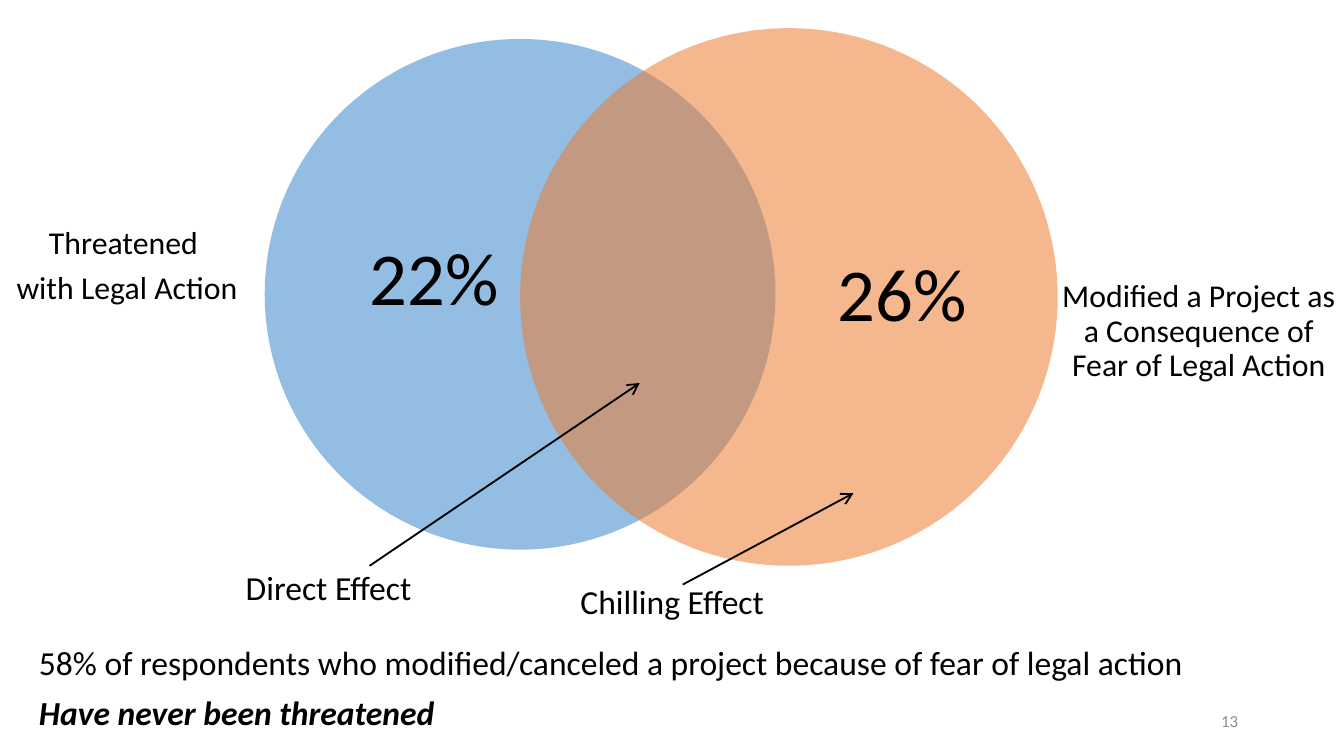
from lxml import etree
from pptx import Presentation
from pptx.dml.color import RGBColor
from pptx.enum.shapes import MSO_CONNECTOR, MSO_SHAPE
from pptx.enum.text import MSO_ANCHOR, MSO_AUTO_SIZE, PP_ALIGN
from pptx.oxml.ns import qn
from pptx.util import Inches, Pt

COLORS = {"text": "000000", "number": "8C8C8C", "threatened": "5B9BD5", "modified": "ED7D31"}


def add_line(para, text, size, color="text", strong=False):
    span = para.add_run()
    span.text = text
    span.font.name = "Calibri"
    span.font.size = Pt(size)
    span.font.bold = span.font.italic = strong
    span.font.color.rgb = RGBColor.from_string(COLORS[color])


def add_label(page, place, lines, size, align, inset=True, color="text"):
    """Text box; without inset it is a diagram label with tight lines."""
    box = page.shapes.add_textbox(*[Inches(n) for n in place])
    frame = box.text_frame
    frame.word_wrap = True
    frame.vertical_anchor = MSO_ANCHOR.MIDDLE
    if not inset:
        frame.margin_left = frame.margin_right = frame.margin_top = frame.margin_bottom = 0
    for i, line in enumerate(lines):
        para = frame.paragraphs[0] if i == 0 else frame.add_paragraph()
        para.alignment = align
        if not inset:
            para.line_spacing = 0.9
            para.space_after = Pt(6)
        add_line(para, line, size, color)


# 16:9 page
deck = Presentation()
deck.slide_width = Inches(10)
deck.slide_height = Inches(10) * 9 // 16
page = deck.slides.add_slide(deck.slide_layouts.get_by_name("Section Header"))

# Finding at the bottom, in the body placeholder
title = page.shapes.title
title.element.getparent().remove(title.element)
body = page.placeholders[1]
body.left, body.top, body.width, body.height = [Inches(n) for n in (0.19, 4.76, 9.78, 0.85)]
frame = body.text_frame
frame.word_wrap = True
frame.auto_size = MSO_AUTO_SIZE.NONE
frame.vertical_anchor = MSO_ANCHOR.TOP
finding = [
    ("58% of respondents who modified/canceled a project because of fear of legal action", 0, False),
    ("Have never been threatened", 7.5, True),
]
for i, (text, gap, strong) in enumerate(finding):
    para = frame.paragraphs[0] if i == 0 else frame.add_paragraph()
    para.alignment = PP_ALIGN.LEFT
    para.line_spacing = 0.9
    para.space_before = Pt(gap)
    add_line(para, text, 18, strong=strong)

# Page number
add_label(page, (7.06, 5.21, 2.25, 0.3), ["13"], 9, PP_ALIGN.RIGHT, color="number")

# Overlapping translucent circles
for left, top, size, color, opacity in [
    (1.97, 0.29, 3.8, "threatened", 65),
    (3.87, 0.21, 4, "modified", 55),
]:
    circle = page.shapes.add_shape(
        MSO_SHAPE.OVAL, Inches(left), Inches(top), Inches(size), Inches(size))
    circle.shadow.inherit = False
    circle.line.fill.background()
    circle.fill.solid()
    circle.fill.fore_color.rgb = RGBColor.from_string(COLORS[color])
    tint = circle.element.spPr.find(qn("a:solidFill"))[0]
    etree.SubElement(tint, qn("a:alpha")).set("val", str(opacity * 1000))

# Shares inside the circles and labels beside them
for place, lines, size, align in [
    ((5.56, 0.68, 2.31, 3.06), ["26%"], 40, PP_ALIGN.CENTER),
    ((2.75, 0.84, 1.89, 2.51), ["22%"], 40, PP_ALIGN.LEFT),
    ((0, 0.73, 1.89, 2.51), ["Threatened ", "with Legal Action"], 17, PP_ALIGN.CENTER),
    ((7.87, 0.94, 2.1, 3.06),
     ["Modified a Project as a Consequence of Fear of Legal Action"], 17, PP_ALIGN.CENTER),
]:
    add_label(page, place, lines, size, align, inset=False)

# Effects, each with an arrow to its region
for text, left, top, start, end in [
    ("Direct Effect", 1.73, 4.17, (2.75, 4.21), (4.76, 2.85)),
    ("Chilling Effect", 4.22, 4.27, (5.08, 4.35), (6.35, 3.67)),
]:
    add_label(page, (left, top, 1.72, 0.4), [text], 18, PP_ALIGN.LEFT)
    arrow = page.shapes.add_connector(
        MSO_CONNECTOR.STRAIGHT, *[Inches(n) for n in start + end])
    arrow.line.width = Pt(1)
    arrow.line.color.rgb = RGBColor.from_string(COLORS["text"])
    outline = arrow.element.spPr.find(qn("a:ln"))
    etree.SubElement(outline, qn("a:tailEnd")).set("type", "arrow")
    etree.SubElement(arrow.element.spPr, qn("a:effectLst"))

deck.save("out.pptx")
